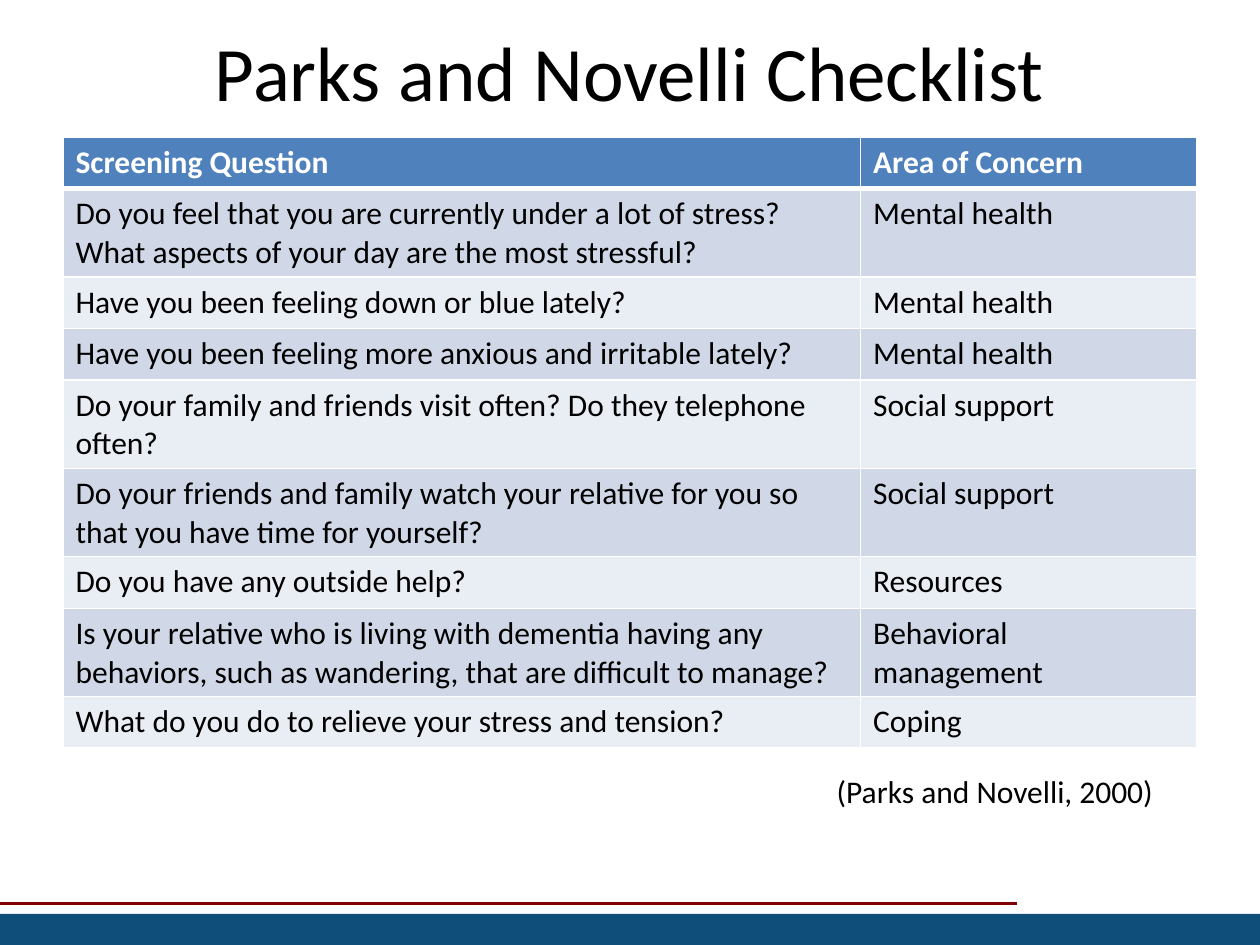
from lxml.etree import SubElement
from pptx import Presentation
from pptx.dml.color import RGBColor
from pptx.enum.shapes import MSO_CONNECTOR, MSO_SHAPE
from pptx.enum.text import MSO_ANCHOR, PP_ALIGN
from pptx.oxml.ns import qn
from pptx.util import Inches, Pt

WIDTH, HEIGHT = Inches(10), Inches(7.5)
FONT = "Calibri"
COLORS = {
    "text": "000000",
    "white": "FFFFFF",
    "header": "4F81BD",
    "odd_row": "D0D8E8",
    "even_row": "E9EDF4",
    "rule": "800000",
    "footer": "0F4D7B",
}
COLUMN_SHARES = (0.633, 0.267)
ROW_SHARE = 0.41 / 7.5
HEADINGS = ("Screening Question", "Area of Concern")
CHECKLIST = [
    ("Do you feel that you are currently under a lot of stress? "
     "What aspects of your day are the most stressful?", "Mental health"),
    ("Have you been feeling down or blue lately?", "Mental health"),
    ("Have you been feeling more anxious and irritable lately?", "Mental health"),
    ("Do your family and friends visit often? Do they telephone often?",
     "Social support"),
    ("Do your friends and family watch your relative for you so that you "
     "have time for yourself?", "Social support"),
    ("Do you have any outside help?", "Resources"),
    ("Is your relative who is living with dementia having any behaviors, "
     "such as wandering, that are difficult to manage?", "Behavioral management"),
    ("What do you do to relieve your stress and tension?", "Coping"),
]


def color(name):
    return RGBColor.from_string(COLORS[name])


def across(share):
    return round(WIDTH * share)


def down(share):
    return round(HEIGHT * share)


def style_paragraph(paragraph, size, color_name="text", bold=False):
    font = paragraph.font
    font.name, font.size, font.bold = FONT, Pt(size), bold
    font.color.rgb = color(color_name)


def add_text(page, text, left, top, width, height, size, align, anchor):
    box = page.shapes.add_textbox(across(left), down(top), across(width), down(height))
    frame = box.text_frame
    frame.word_wrap = True
    frame.vertical_anchor = anchor
    paragraph = frame.paragraphs[0]
    paragraph.text = text
    paragraph.alignment = align
    style_paragraph(paragraph, size)


def add_footer(page):
    line = page.shapes.add_connector(
        MSO_CONNECTOR.STRAIGHT, 0, down(0.956), across(0.807), down(0.956))
    line.line.color.rgb = color("rule")
    line.line.width = Pt(1.5)
    SubElement(line.element.spPr, qn("a:effectLst"))
    band_top = down(0.967)
    band = page.shapes.add_shape(
        MSO_SHAPE.RECTANGLE, 0, band_top, WIDTH, HEIGHT - band_top)
    band.shadow.inherit = False
    band.fill.solid()
    band.fill.fore_color.rgb = color("footer")
    band.line.fill.background()


def set_borders(cell, top_width, bottom_width):
    properties = cell._tc.get_or_add_tcPr()
    widths = {"a:lnL": 1, "a:lnR": 1, "a:lnT": top_width, "a:lnB": bottom_width}
    for tag, width in widths.items():
        border = SubElement(properties, qn(tag), w=str(Pt(width)))
        fill = SubElement(border, qn("a:solidFill"))
        SubElement(fill, qn("a:srgbClr"), val=COLORS["white"])


def fill_cell(cell, text, row):
    is_header = row == 0
    set_borders(cell, 3 if row == 1 else 1, 3 if is_header else 1)
    cell.fill.solid()
    band = "header" if is_header else "odd_row" if row % 2 else "even_row"
    cell.fill.fore_color.rgb = color(band)
    cell.text = text
    style_paragraph(cell.text_frame.paragraphs[0], 18,
                    "white" if is_header else "text", is_header)


def add_checklist(page):
    rows = [HEADINGS, *CHECKLIST]
    table = page.shapes.add_table(
        len(rows), len(HEADINGS), across(0.05), down(0.145),
        across(sum(COLUMN_SHARES)), down(ROW_SHARE * len(rows))).table
    for column, share in zip(table.columns, COLUMN_SHARES):
        column.width = across(share)
    for row, texts in enumerate(rows):
        table.rows[row].height = down(ROW_SHARE)
        for column, text in enumerate(texts):
            fill_cell(table.cell(row, column), text, row)


def main():
    deck = Presentation()
    deck.slide_width, deck.slide_height = WIDTH, HEIGHT
    page = deck.slides.add_slide(deck.slide_layouts[6])
    add_footer(page)
    add_text(page, "Parks and Novelli Checklist", 0.05, 0.01, 0.9, 0.13,
             44, PP_ALIGN.CENTER, MSO_ANCHOR.MIDDLE)
    add_checklist(page)
    add_text(page, "(Parks and Novelli, 2000)", 0.05, 0.81, 0.875, 0.067,
             18, PP_ALIGN.RIGHT, MSO_ANCHOR.TOP)
    deck.save("out.pptx")


if __name__ == "__main__":
    main()
